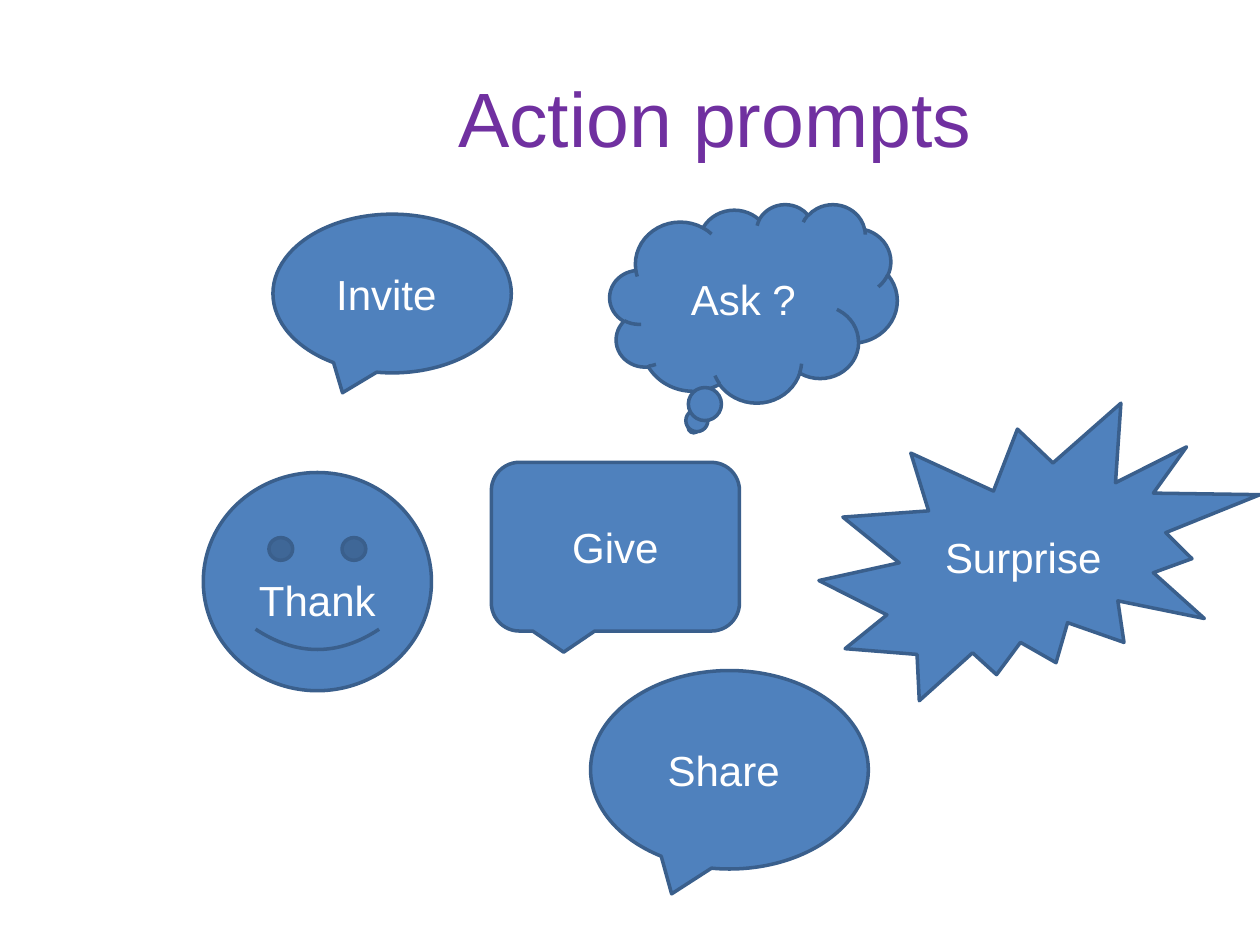
from typing import NamedTuple

from pptx import Presentation
from pptx.dml.color import RGBColor
from pptx.enum.shapes import MSO_SHAPE as Preset
from pptx.enum.text import MSO_ANCHOR as Anchor, PP_ALIGN as Align
from pptx.util import Pt

COLORS = {"title": "7030A0", "fill": "4F81BD", "line": "3A5F8C", "label": "FFFFFF"}


class Prompt(NamedTuple):
    text: str
    preset: Preset
    left: float
    top: float
    width: float
    height: float
    inset_top: float = 3.6


PROMPTS = [
    Prompt("Invite ", Preset.OVAL_CALLOUT, 156, 122.4, 136.2, 90.7),
    Prompt("Share ", Preset.OVAL_CALLOUT, 337.5, 383.2, 158.7, 113.4),
    Prompt("Ask ?", Preset.CLOUD_CALLOUT, 348.5, 116.6, 164.2, 113.4),
    Prompt("Give", Preset.ROUNDED_RECTANGULAR_CALLOUT, 280.8, 264.2, 141.8, 96.4),
    Prompt("Surprise", Preset.EXPLOSION2, 468, 230.4, 252, 170),
    Prompt("Thank", Preset.SMILEY_FACE, 116.2, 270, 130.4, 124.7, inset_top=24.3),
]


def color(name: str) -> RGBColor:
    """Return a palette colour."""
    return RGBColor.from_string(COLORS[name])


def write(box, text: str, *, size: float, ink: str, inset_top: float = 3.6) -> None:
    """Write one centred line of text in a box."""
    frame = box.text_frame
    frame.word_wrap = True
    frame.vertical_anchor = Anchor.MIDDLE
    frame.margin_top = Pt(inset_top)
    para = frame.paragraphs[0]
    para.alignment = Align.CENTER
    span = para.add_run()
    span.text = text
    span.font.name = "Arial"
    span.font.size = Pt(size)
    span.font.color.rgb = color(ink)


def draw_prompt(page, prompt: Prompt) -> None:
    """Draw one labelled prompt shape."""
    box = page.shapes.add_shape(
        prompt.preset, Pt(prompt.left), Pt(prompt.top), Pt(prompt.width), Pt(prompt.height)
    )
    box.shadow.inherit = False
    box.fill.solid()
    box.fill.fore_color.rgb = color("fill")
    box.line.color.rgb = color("line")
    box.line.width = Pt(2)
    write(box, prompt.text, size=24, ink="label", inset_top=prompt.inset_top)


def main() -> None:
    """Build and save the slide."""
    deck = Presentation()
    deck.slide_width, deck.slide_height = Pt(720), Pt(540)
    page = deck.slides.add_slide(deck.slide_layouts[6])
    title = page.shapes.add_textbox(Pt(133.2), Pt(21.6), Pt(550.8), Pt(90))
    write(title, "Action prompts", size=44, ink="title")
    for prompt in PROMPTS:
        draw_prompt(page, prompt)
    deck.save("out.pptx")


if __name__ == "__main__":
    main()
